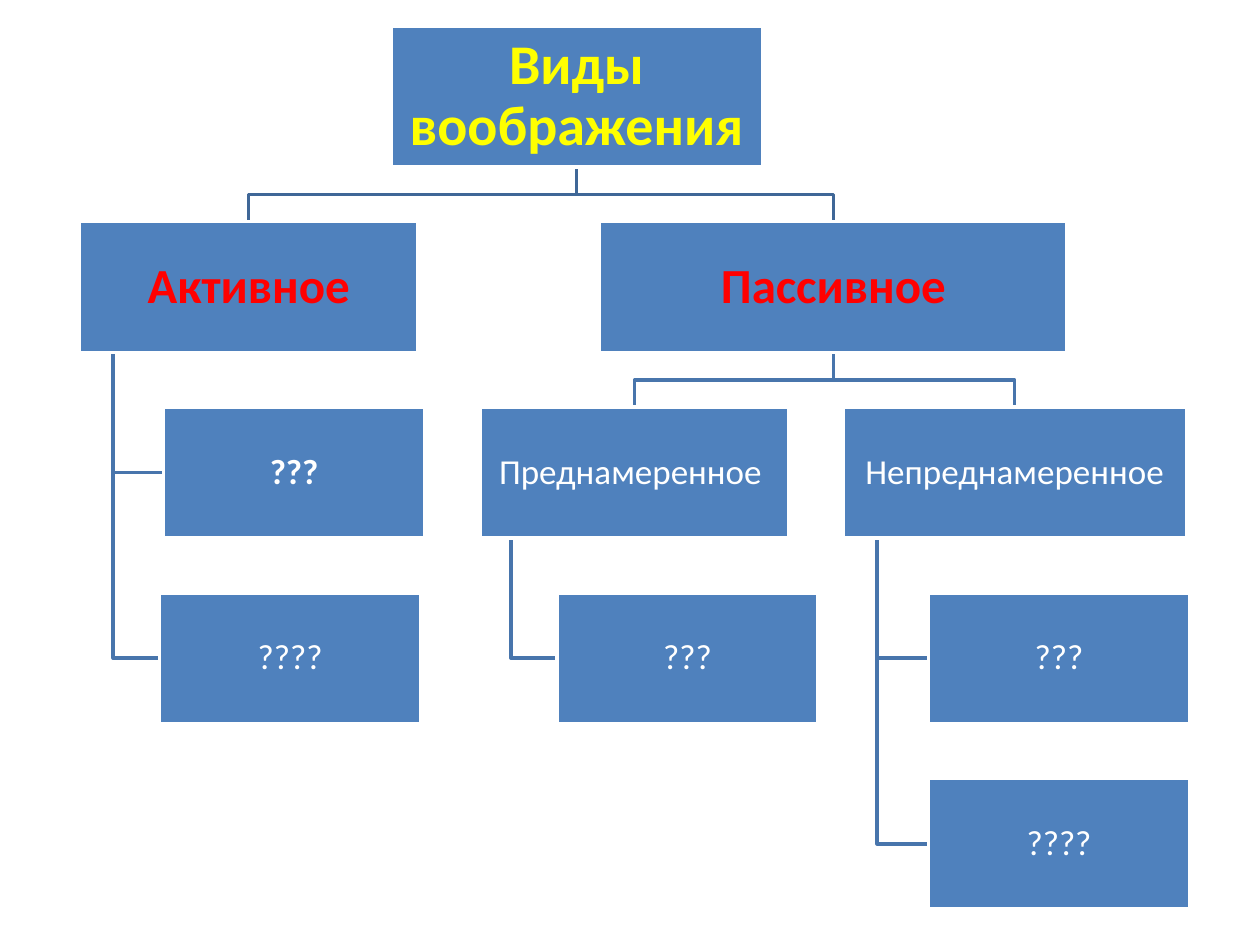
from pptx import Presentation
from pptx import util as u
from pptx.dml.color import RGBColor
from pptx.enum import shapes, text

COLORS = {"box": "4F81BD", "edge": "FFFFFF", "trunk": "3F6797", "branch": "4875AC",
          "title": "FFFF00", "kind": "FF0000", "text": "FFFFFF"}

# key: (wording, parent, row, left cm, width cm, text size, bold, text colour)
BOXES = {
    "root": ("Виды воображения", None, 0, 7.88, 7.49, 32, True, "title"),
    "active": ("Активное", "root", 1, 1.6, 6.83, 28, True, "kind"),
    "active 1": ("???", "active", 2, 3.3, 5.26, 20, True, "text"),
    "active 2": ("????", "active", 3, 3.22, 5.26, 20, False, "text"),
    "passive": ("Пассивное", "root", 1, 12.09, 9.42, 28, True, "kind"),
    "intended": ("Преднамеренное ", "passive", 2, 9.68, 6.22, 20, False, "text"),
    "intended 1": ("???", "intended", 3, 11.23, 5.26, 20, False, "text"),
    "unintended": ("Непреднамеренное", "passive", 2, 16.99, 6.93, 20, False, "text"),
    "unintended 1": ("???", "unintended", 3, 18.72, 5.26, 20, False, "text"),
    "unintended 2": ("????", "unintended", 4, 18.72, 5.26, 20, False, "text"),
}
FORKED = ("root", "passive")  # the other parents hang their children from a side stem
ROOT_TOP, ROOT_HEIGHT = 0.53, 2.84
FIRST_ROW, ROW_PITCH, HEIGHT = 4.47, 3.74, 2.64
STEM_INSET = 0.1  # share of the parent's width


def rgb(name):
    return RGBColor.from_string(COLORS[name])


def frame(key):
    """Return left, top, width and height of a box in cm."""
    _, _, row, left, width, *_ = BOXES[key]
    if row == 0:
        return left, ROOT_TOP, width, ROOT_HEIGHT
    return left, FIRST_ROW + (row - 1) * ROW_PITCH, width, HEIGHT


def branch_points(parent, child):
    px, py, pw, ph = frame(parent)
    cx, cy, cw, ch = frame(child)
    bottom = py + ph
    if parent in FORKED:
        start, end, middle = px + pw / 2, cx + cw / 2, (bottom + cy) / 2
        return [(start, bottom), (start, middle), (end, middle), (end, cy)]
    stem, level = px + pw * STEM_INSET, cy + ch / 2
    return [(stem, bottom), (stem, level), (cx, level)]


def add_branch(s, parent, child):
    points = [(u.Cm(x), u.Cm(y)) for x, y in branch_points(parent, child)]
    builder = s.shapes.build_freeform(*points[0])
    builder.add_line_segments(points[1:], close=False)
    sp = builder.convert_to_shape()
    sp.shadow.inherit = False
    sp.fill.background()
    sp.line.color.rgb = rgb("trunk" if parent == "root" else "branch")
    sp.line.width = u.Pt(2)


def format_box(sp, key):
    wording, _, _, _, _, size, bold, color = BOXES[key]
    sp.left, sp.top, sp.width, sp.height = map(u.Cm, frame(key))
    sp.fill.solid()
    sp.fill.fore_color.rgb = rgb("box")
    sp.line.color.rgb = rgb("edge")
    sp.line.width = u.Pt(2)
    tf = sp.text_frame
    tf.word_wrap = True
    tf.auto_size = text.MSO_AUTO_SIZE.NONE
    tf.vertical_anchor = text.MSO_ANCHOR.MIDDLE
    tf.margin_left = tf.margin_right = tf.margin_top = tf.margin_bottom = u.Cm(0.04)
    p = tf.paragraphs[0]
    p.alignment = text.PP_ALIGN.CENTER
    p.line_spacing = 0.9
    r = p.add_run()
    r.text = wording
    r.font.name = "Calibri"
    r.font.size = u.Pt(size)
    r.font.bold = bold
    r.font.color.rgb = rgb(color)


def main():
    prs = Presentation()
    prs.slide_width, prs.slide_height = u.Cm(25.4), u.Cm(19.05)
    s = prs.slides.add_slide(prs.slide_layouts[5])
    for key, (_, parent, *_) in BOXES.items():
        if parent:
            add_branch(s, parent, key)

    title = s.shapes.title
    title.element.getparent().append(title.element)  # in front of the branches
    for key in BOXES:
        if key == "root":
            sp = title
        else:
            sp = s.shapes.add_shape(shapes.MSO_SHAPE.RECTANGLE, 0, 0, 0, 0)
            sp.shadow.inherit = False
        format_box(sp, key)
    prs.save("out.pptx")


if __name__ == "__main__":
    main()
